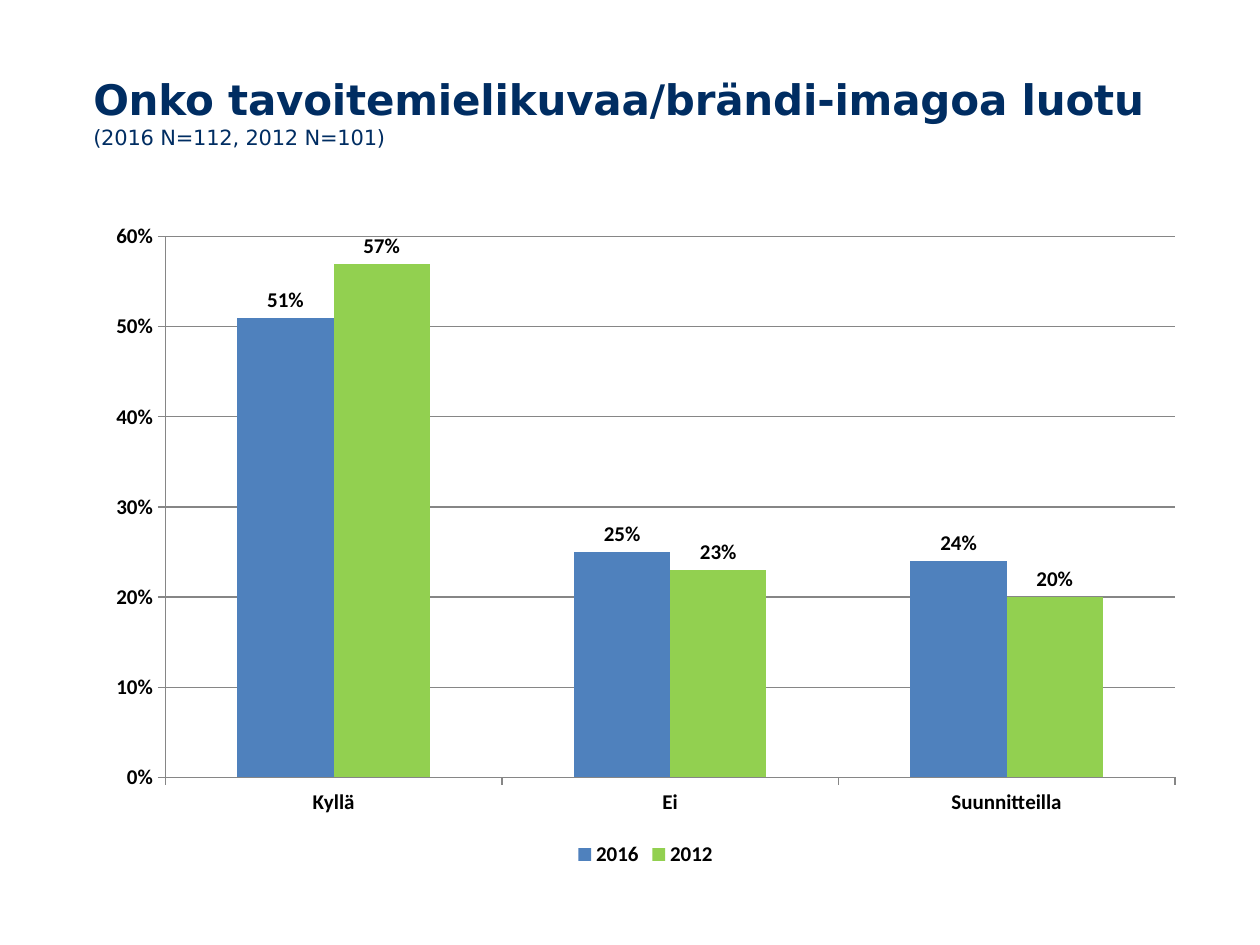
from pptx import Presentation
from pptx.chart.data import CategoryChartData
from pptx.dml.color import RGBColor
from pptx.enum.chart import (XL_CHART_TYPE, XL_LABEL_POSITION,
                             XL_LEGEND_POSITION, XL_TICK_MARK)
from pptx.enum.text import MSO_ANCHOR, MSO_AUTO_SIZE, PP_ALIGN
from pptx.util import Cm, Pt

COLUMNS = XL_CHART_TYPE.COLUMN_CLUSTERED
LABEL_ABOVE = XL_LABEL_POSITION.OUTSIDE_END
LEGEND_BELOW = XL_LEGEND_POSITION.BOTTOM
TICK_OUT = XL_TICK_MARK.OUTSIDE
TOP = MSO_ANCHOR.TOP
GROW = MSO_AUTO_SIZE.SHAPE_TO_FIT_TEXT
LEFT = PP_ALIGN.LEFT

# Content
HEADING = "Onko tavoitemielikuvaa/brändi-imagoa luotu"
SAMPLE_SIZES = "(2016 N=112, 2012 N=101)"
ANSWERS = ["Kyllä", "Ei", "Suunnitteilla"]
SHARES = {"2016": [0.51, 0.25, 0.24], "2012": [0.57, 0.23, 0.20]}

THEME = {
    "title_font": "DejaVu Sans", "chart_font": "Calibri",
    "heading_size": Pt(24), "sample_size": Pt(12), "chart_size": Pt(12),
    "navy": RGBColor(0x00, 0x2D, 0x62),
    "black": RGBColor(0x00, 0x00, 0x00),
    "grey": RGBColor(0x86, 0x86, 0x86),
    "series": [RGBColor(0x4F, 0x81, 0xBD), RGBColor(0x92, 0xD0, 0x50)],
}
PERCENT = "0%"


def add_title_span(para, text, size, bold):
    span = para.add_run()
    span.text = text
    span.font.name = THEME["title_font"]
    span.font.size = size
    span.font.bold = bold
    span.font.color.rgb = THEME["navy"]
    span.font._element.set("spc", "-10")


def fill_title(box):
    box.left, box.top, box.width, box.height = Cm(1.85), Cm(0.25), Cm(21.67), Cm(2.9)
    frame = box.text_frame
    frame.margin_left = frame.margin_right = frame.margin_bottom = 0
    frame.margin_top = Cm(1.24)
    frame.vertical_anchor = TOP
    frame.word_wrap = True
    frame.auto_size = GROW
    para = frame.paragraphs[0]
    para.alignment = LEFT
    para._p.get_or_add_pPr().set("marL", str(Cm(0.03)))
    add_title_span(para, HEADING, THEME["heading_size"], True)
    para.add_line_break()
    add_title_span(para, SAMPLE_SIZES, THEME["sample_size"], False)


def add_share_chart(page):
    data = CategoryChartData(number_format=PERCENT)
    data.categories = ANSWERS
    for year, shares in SHARES.items():
        data.add_series(year, shares)
    chart = page.shapes.add_chart(
        COLUMNS, Cm(1.9), Cm(4.25), Cm(22.23), Cm(13.33), data).chart
    chart.has_title = False
    chart.font.name = THEME["chart_font"]
    chart.font.size = THEME["chart_size"]
    chart.font.bold = True
    chart.font.color.rgb = THEME["black"]

    # Legend
    chart.has_legend = True
    chart.legend.position = LEGEND_BELOW
    chart.legend.include_in_layout = False

    # Axes and gridlines
    share_axis = chart.value_axis
    share_axis.minimum_scale, share_axis.maximum_scale = 0, 0.6
    share_axis.major_unit = 0.1
    share_axis.has_major_gridlines = True
    share_axis.tick_labels.number_format = PERCENT
    share_axis.tick_labels.number_format_is_linked = False
    for axis in (chart.category_axis, share_axis):
        axis.major_tick_mark = TICK_OUT
    for part in (chart.category_axis, share_axis, share_axis.major_gridlines):
        part.format.line.color.rgb = THEME["grey"]
        part.format.line.width = Pt(0.75)

    # Columns and their labels
    plot = chart.plots[0]
    plot.gap_width = 150
    plot.overlap = 0
    plot.vary_by_categories = False
    for series, color in zip(plot.series, THEME["series"]):
        series.format.fill.solid()
        series.format.fill.fore_color.rgb = color
        labels = series.data_labels
        labels.show_value = True
        labels.number_format = PERCENT
        labels.number_format_is_linked = False
        labels.position = LABEL_ABOVE


def main():
    deck = Presentation()
    deck.slide_width, deck.slide_height = Cm(25.4), Cm(19.05)
    page = deck.slides.add_slide(deck.slide_layouts[5])
    fill_title(page.shapes.title)
    add_share_chart(page)
    deck.save("out.pptx")


if __name__ == "__main__":
    main()
